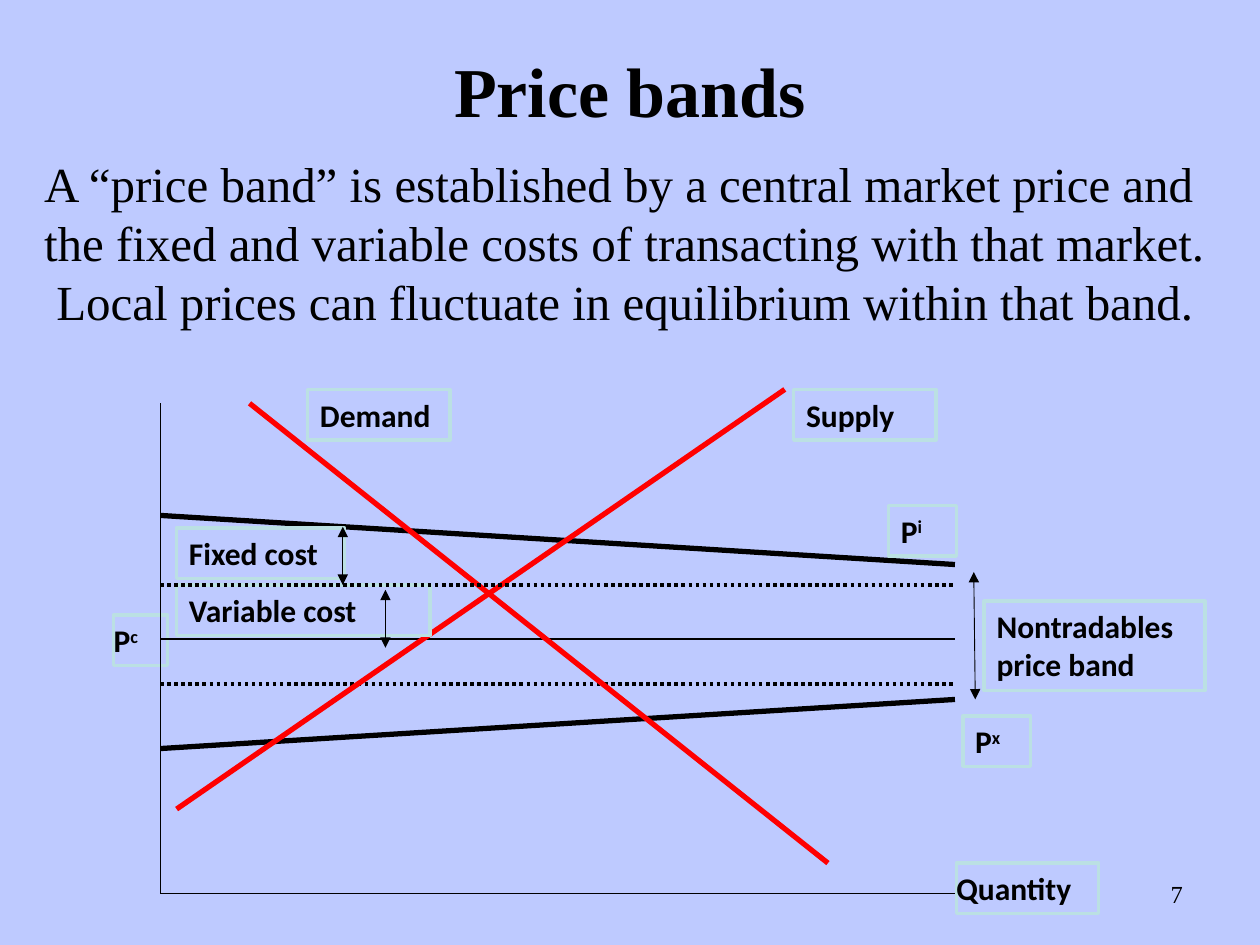
from lxml.etree import SubElement as Sub
from pptx import Presentation
from pptx.dml.color import RGBColor as Rgb
from pptx.enum.dml import MSO_LINE as Dash
from pptx.enum.shapes import MSO_CONNECTOR as Link, MSO_SHAPE as Form
from pptx.enum.text import MSO_ANCHOR as Anchor, PP_ALIGN as Align
from pptx.oxml.ns import qn
from pptx.util import Cm, Pt

HUES = {"back": "BECAFF", "edge": "BBE0E3", "ink": "000000", "curve": "FF0000"}
SERIF = {"name": "Times New Roman", "size": Pt(28), "bold": False}
LABEL = {"name": "Calibri", "size": Pt(18), "bold": True}
LEFT, RIGHT, TOP, BASE = 3.23, 19.25, 8.13, 18.01
MID, HIGH, LOW = 12.88, 11.79, 13.79


def hue(name):
    return Rgb.from_string(HUES[name])


def style(item, form):
    for key, value in form.items():
        setattr(item, key, value)


def write(frame, text, font, para=None, box=None, sup=""):
    style(frame, {"word_wrap": True, **(box or {})})
    line = frame.paragraphs[0]
    style(line, para or {})
    for part in filter(None, (text, sup)):
        run = line.add_run()
        run.text = part
        style(run.font, font)
        run.font.color.rgb = hue("ink")
    if sup:
        run._r.get_or_add_rPr().set("baseline", "30000")


def label(slide, text, x, y, w, h=1.02, sup="", flush=False):
    shape = slide.shapes.add_shape(Form.RECTANGLE, *map(Cm, (x, y, w, h)))
    shape.shadow.inherit = False
    shape.fill.solid()
    shape.fill.fore_color.rgb = hue("back")
    shape.line.color.rgb = hue("edge")
    shape.line.width = Pt(2)
    box = {"vertical_anchor": Anchor.TOP}
    if flush:
        box.update(margin_left=0, margin_right=0)
    para = {"alignment": Align.LEFT, "space_after": Pt(10)}
    write(shape.text_frame, text, LABEL, para, box, sup)


def rule(slide, x1, y1, x2, y2, width=0.75, color="ink", dash=None):
    link = slide.shapes.add_connector(Link.STRAIGHT, *map(Cm, (x1, y1, x2, y2)))
    link.line.color.rgb = hue(color)
    style(link.line, {"width": Pt(width), "dash_style": dash})
    Sub(link._element.spPr, qn("a:effectLst"))
    return link


def span(slide, x1, y1, x2, y2):
    line = rule(slide, x1, y1, x2, y2, 0.5).line._get_or_add_ln()
    for end in ("a:headEnd", "a:tailEnd"):
        Sub(line, qn(end), type="triangle")


def note(slide, text, x, y, w, h, font, para=None, box=None):
    shape = slide.shapes.add_textbox(*map(Cm, (x, y, w, h)))
    write(shape.text_frame, text, font, para, box)


def head(slide, text):
    title = slide.shapes.title
    place = zip(("left", "top", "width", "height"), (1.27, 0.64, 22.86, 2.34))
    style(title, {key: Cm(size) for key, size in place})
    box = {"vertical_anchor": Anchor.MIDDLE,
           "margin_left": Cm(0.36), "margin_right": Cm(0.36)}
    font = {**SERIF, "size": Pt(40), "bold": True}
    write(title.text_frame, text, font, {"alignment": Align.CENTER}, box)


def graph(slide):
    label(slide, "P", 2.29, 12.4, 1.09, sup="c", flush=True)
    label(slide, "Nontradables price band", 19.84, 12.12, 4.45, 1.8)
    rule(slide, LEFT, TOP, LEFT, BASE)
    rule(slide, LEFT, BASE, 19.63, BASE)
    rule(slide, LEFT, MID, RIGHT, MID)
    rule(slide, LEFT, LOW, RIGHT, LOW, 2, dash=Dash.ROUND_DOT)
    for start, stop in ((15.09, 14.1), (10.39, 11.38)):
        rule(slide, LEFT, start, RIGHT, stop, 3)
    rule(slide, 5.03, TOP, 16.69, 17.4, 3, "curve")
    rule(slide, 3.56, 16.31, 15.82, 7.85, 3, "curve")
    label(slide, "Quantity", 19.28, 17.4, 2.87, flush=True)
    label(slide, "P", 19.41, 14.43, 1.37, sup="x")
    label(slide, "Variable cost", 3.56, HIGH, 5.11)
    label(slide, "P", 17.91, 10.19, 1.37, sup="i")
    rule(slide, LEFT, HIGH, RIGHT, HIGH, 2, dash=Dash.ROUND_DOT)
    label(slide, "Fixed cost", 3.56, 10.64, 3.38)
    span(slide, 6.91, 10.62, 6.91, HIGH)
    span(slide, 7.77, 11.89, 7.77, 13.06)
    for text, x in (("Supply", 16), ("Demand", 6.2)):
        label(slide, text, x, 7.85, 2.87)
    span(slide, 19.63, 11.53, 19.66, 14.1)


def main():
    deck = Presentation()
    style(deck, {"slide_width": Cm(25.4), "slide_height": Cm(19.05)})
    slide = deck.slides.add_slide(deck.slide_layouts[5])
    slide.background.fill.solid()
    slide.background.fill.fore_color.rgb = hue("back")
    head(slide, "Price bands")
    graph(slide)
    note(slide, "A “price band” is established by a central market price and "
         "the fixed and variable costs of transacting with that market.  "
         "Local prices can fluctuate in equilibrium within that band.",
         0.64, 2.97, 23.93, 3.84, SERIF)
    note(slide, "7", 23.32, 17.6, 0.81, 0.81, {**SERIF, "size": Pt(14)},
         {"alignment": Align.CENTER}, {"word_wrap": False})
    deck.save("out.pptx")


if __name__ == "__main__":
    main()
